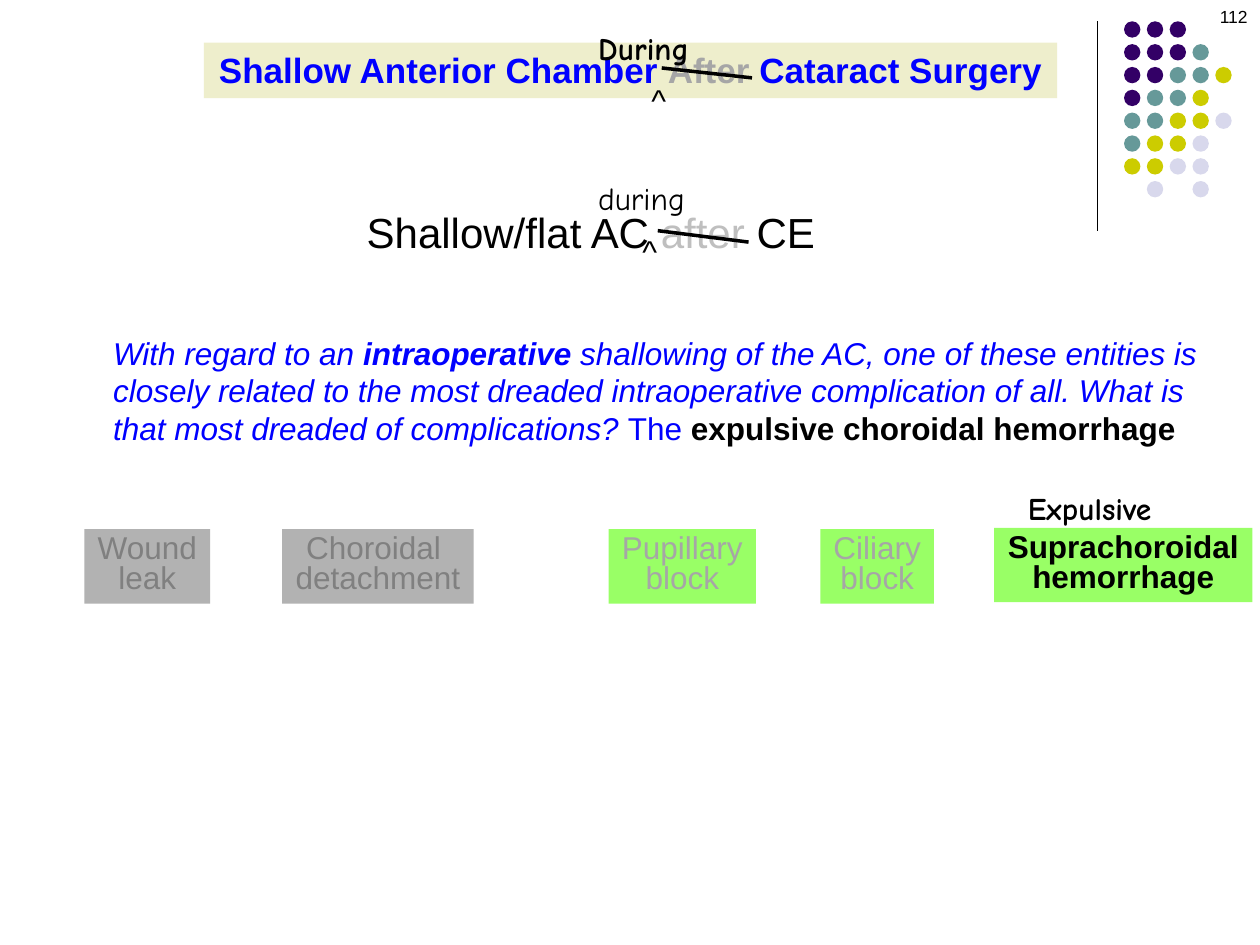
from lxml.etree import SubElement
from pptx import Presentation
from pptx.dml.color import RGBColor
from pptx.enum.shapes import MSO_CONNECTOR, MSO_SHAPE
from pptx.enum.text import MSO_ANCHOR, PP_ALIGN
from pptx.oxml.ns import qn
from pptx.util import Cm, Pt

COLORS = {
    "black": "000000", "blue": "0000FF", "cream": "EEEECC",
    "green": "99FF66", "panel": "B2B2B2", "dim": "808080",
    "faded": "A6A6A6", "pale": "BFBFBF",
    "P": "330066", "T": "669999", "Y": "CCCC00", "L": "D8D8EC",
}


def rgb(name):
    return RGBColor.from_string(COLORS[name])


class SlideBuilder:
    """Holds the text style and the page being filled."""

    body_font = "Arial"
    hand_font = "Comic Neue"

    def __init__(self, page):
        self.page = page

    def line(self, start, end, width):
        line = self.page.shapes.add_connector(
            MSO_CONNECTOR.STRAIGHT, *map(Cm, start + end))
        line.line.color.rgb = rgb("black")
        line.line.width = Pt(width)
        SubElement(line._element.spPr, qn("a:effectLst"))

    def shape(self, kind, place, fill, parent=None):
        shape = (parent or self.page).shapes.add_shape(kind, *map(Cm, place))
        shape.shadow.inherit = False
        shape.fill.solid()
        shape.fill.fore_color.rgb = rgb(fill)
        shape.line.fill.background()
        return shape

    def style(self, font, name, size, color, bold=False, italic=False):
        font.name, font.size = name, Pt(size)
        font.bold, font.italic = bold, italic
        font.color.rgb = rgb(color)

    def text(self, place, paragraphs, size=18, color="black", fill=None,
             align=PP_ALIGN.LEFT, spacing=None, wrap=True, name=None, **look):
        """Each paragraph is a list of (words, changes to the base style)."""
        if fill:
            box = self.shape(MSO_SHAPE.RECTANGLE, place, fill)
        else:
            box = self.page.shapes.add_textbox(*map(Cm, place))
        frame = box.text_frame
        frame.word_wrap = wrap
        frame.vertical_anchor = MSO_ANCHOR.TOP
        base = dict(name=name or self.body_font, size=size, color=color, **look)
        for index, spans in enumerate(paragraphs):
            para = frame.add_paragraph() if index else frame.paragraphs[0]
            para.alignment = align
            if spacing:
                para.line_spacing = spacing
            self.style(para.font, **base)
            for words, changes in spans:
                span = para.add_run()
                span.text = words
                self.style(span.font, **{**base, **changes})

    def label(self, place, lines, fill, color, bold=False):
        self.text(place, [[(words, {})] for words in lines], color=color,
                  fill=fill, align=PP_ALIGN.CENTER, spacing=0.8, wrap=False,
                  bold=bold)

    def note(self, place, words, **look):
        self.text(place, [[(words, {})]], **look)

    def dots(self, left, top, pitch, size, rows):
        group = self.page.shapes.add_group_shape()
        for row, codes in enumerate(rows):
            for column, code in enumerate(codes):
                if code in COLORS:
                    place = (left + column * pitch, top + row * pitch, size, size)
                    self.shape(MSO_SHAPE.OVAL, place, code, group)


def main():
    deck = Presentation()
    deck.slide_width, deck.slide_height = Cm(25.4), Cm(19.05)
    builder = SlideBuilder(deck.slides.add_slide(deck.slide_layouts[6]))
    hand = builder.hand_font

    # Corner ornament and page number
    builder.line((22.12, 0.43), (22.12, 4.65), 0.75)
    builder.dots(22.66, 0.43, 0.46, 0.33, [
        "PPP", "PPPT", "PPTTY", "PTTY", "TTYYL", "TYYL", "YYLL", ".L.L"])
    builder.note((19.48, 0, 5.92, 1.27), "112", size=10, align=PP_ALIGN.RIGHT)

    # Causes
    for left, top, width, lines, fill, color in [
        (1.7, 10.67, 2.54, ("Wound", "leak"), "panel", "dim"),
        (5.69, 10.67, 3.86, ("Choroidal ", "detachment"), "panel", "dim"),
        (12.27, 10.67, 2.97, ("Pupillary", "block"), "green", "faded"),
        (16.54, 10.67, 2.29, ("Ciliary", "block"), "green", "faded"),
        (20.04, 10.64, 5.21, ("Suprachoroidal", "hemorrhage"), "green", "black"),
    ]:
        builder.label((left, top, width, 1.5), lines, fill, color,
                      bold=color == "black")
    builder.note((20.47, 9.73, 3.91, 1.02), "Expulsive", name=hand, bold=True)

    # Question and answer
    builder.text((2.03, 6.6, 22.43, 2.57), [[
        ("With regard to an ", {}),
        ("intraoperative", {"bold": True}),
        (" shallowing of the AC, one of these entities is closely related to "
         "the most dreaded intraoperative complication of all. What is that "
         "most dreaded of complications? ", {}),
        ("The ", {"italic": False}),
        ("expulsive choroidal hemorrhage",
         {"italic": False, "bold": True, "color": "black"}),
    ]], color="blue", italic=True)

    # Title and heading
    builder.text((4.11, 0.86, 17.2, 1.12), [[
        ("Shallow Anterior Chamber ", {}),
        ("After", {"color": "faded"}),
        (" Cataract Surgery", {}),
    ]], size=20, color="blue", fill="cream", align=PP_ALIGN.CENTER,
        wrap=False, bold=True)
    builder.text((7.11, 4.19, 9.6, 1.98), [[
        ("Shallow/flat AC ", {}),
        ("after", {"color": "pale"}),
        (" CE", {}),
    ]], size=24, align=PP_ALIGN.CENTER, spacing=0.85, wrap=False)

    # Handwritten corrections: new word, caret and strike-through
    for word, top, bold, caret, start, end in [
        ("During", 0.46, True, (12.88, 1.5), (13.34, 1.37), (15.16, 1.57)),
        ("during", 3.48, False, (12.7, 4.55), (13.26, 4.65), (15.09, 4.88)),
    ]:
        builder.note((11.81, top, 2.97, 1.02), word, name=hand, bold=bold)
        builder.note(caret + (0.81, 1.02), "^")
        builder.line(start, end, 2)

    deck.save("out.pptx")


if __name__ == "__main__":
    main()
